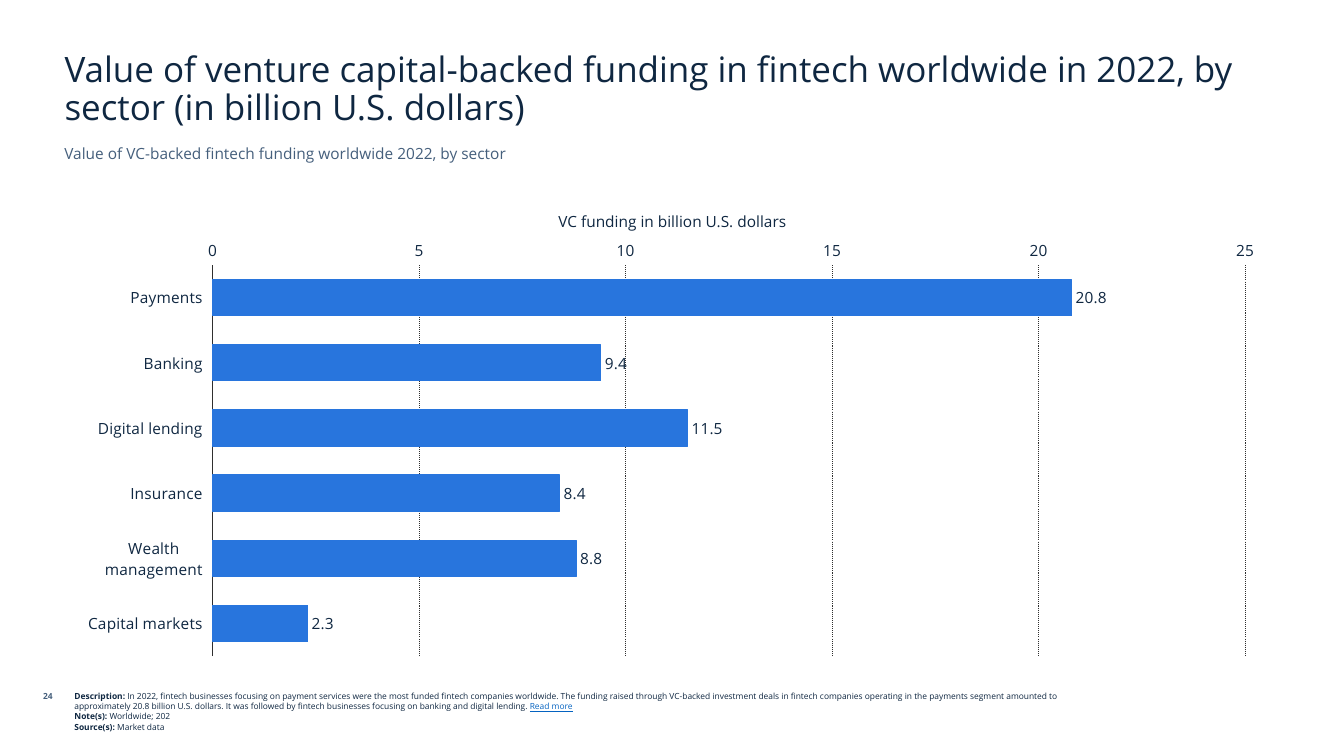
from dataclasses import dataclass

import pptx
import pptx.chart.data
import pptx.dml.color
import pptx.enum.chart
import pptx.enum.dml
import pptx.enum.text
import pptx.oxml
import pptx.oxml.ns
import pptx.util
from pptx.util import Inches

Align = pptx.enum.text.PP_ALIGN
Anchor = pptx.enum.text.MSO_ANCHOR
RGB = pptx.dml.color.RGBColor


@dataclass(frozen=True)
class Theme:
    font: str = "Open Sans"
    navy: RGB = RGB.from_string("0F2741")
    slate: RGB = RGB.from_string("455F7C")
    blue: RGB = RGB.from_string("2875DD")
    link: RGB = RGB.from_string("0563C1")
    rule: RGB = RGB.from_string("2F2F2F")
    title: float = 25
    body: float = 11
    note: float = 6
    line: float = 0.75


THEME = Theme()


@dataclass(frozen=True)
class Box:
    left: float
    top: float
    width: float
    height: float

    def lengths(self) -> tuple:
        return tuple(Inches(v) for v in (self.left, self.top, self.width, self.height))


@dataclass(frozen=True)
class Label:
    text: str
    box: Box
    size: float = THEME.body
    color: RGB = THEME.navy
    bold: bool = False
    align: Align = Align.LEFT


@dataclass(frozen=True)
class Note:
    heading: str
    text: str
    link: str = ""


TITLE = ("Value of venture capital-backed funding in fintech worldwide in 2022, "
         "by sector (in billion U.S. dollars)")
TITLE_BOX = Box(0.54, 0.46, 12.24, 0.86)
NOTES_BOX = Box(0.64, 6.81, 10.47, 0.58)
CHART_BOX = Box(0.64, 2.3, 12.05, 4.3)
PLOT_BOX = Box(2.11, 2.63, 10.24, 3.88)

LABELS = [
    Label("Value of VC-backed fintech funding worldwide 2022, by sector",
          Box(0.54, 1.38, 12.24, 0.34), color=THEME.slate),
    Label("VC funding in billion U.S. dollars", Box(5.05, 2.06, 3.24, 0.24),
          align=Align.CENTER),
    Label("24", Box(-0.1, 6.81, 0.72, 0.3), THEME.note, THEME.slate, True, Align.RIGHT),
]

NOTES = [
    Note("Description: ",
         "In 2022, fintech businesses focusing on payment services were the most funded "
         "fintech companies worldwide. The funding raised through VC-backed investment deals "
         "in fintech companies operating in the payments segment amounted to approximately "
         "20.8 billion U.S. dollars. It was followed by fintech businesses focusing on banking "
         "and digital lending. ", "Read more"),
    Note("Note(s): ", "Worldwide; 202"),
    Note("Source(s): ", "Market data"),
]

FUNDING = {
    "Payments": 20.8,
    "Banking": 9.4,
    "Digital lending": 11.5,
    "Insurance": 8.4,
    "Wealth management": 8.8,
    "Capital markets": 2.3,
}


def set_font(font, size: float, color: RGB = THEME.navy) -> None:
    font.name = THEME.font
    font.size = pptx.util.Pt(size)
    font.color.rgb = color


def set_line(line, color: RGB) -> None:
    line.color.rgb = color
    line.width = pptx.util.Pt(THEME.line)


def add_title(s) -> None:
    sp = s.shapes.title
    sp.left, sp.top, sp.width, sp.height = TITLE_BOX.lengths()
    tf = sp.text_frame
    tf.text = TITLE
    tf.word_wrap = True
    tf.auto_size = pptx.enum.text.MSO_AUTO_SIZE.NONE
    tf.vertical_anchor = Anchor.BOTTOM
    p = tf.paragraphs[0]
    p.alignment = Align.LEFT
    p.line_spacing = 0.9
    set_font(p.font, THEME.title)


def add_text_frame(s, box: Box):
    tf = s.shapes.add_textbox(*box.lengths()).text_frame
    tf.word_wrap = True
    return tf


def add_label(s, label: Label) -> None:
    p = add_text_frame(s, label.box).paragraphs[0]
    p.text = label.text
    p.alignment = label.align
    set_font(p.font, label.size, label.color)
    p.font.bold = label.bold


def add_notes(s) -> None:
    tf = add_text_frame(s, NOTES_BOX)
    for i, note in enumerate(NOTES):
        p = tf.add_paragraph() if i else tf.paragraphs[0]
        set_font(p.font, THEME.note)
        r = p.add_run()
        r.text = note.heading
        r.font.bold = True
        p.add_run().text = note.text
        if note.link:
            r = p.add_run()
            r.text = note.link
            r.font.underline = True
            r.font.color.rgb = THEME.link


def fix_plot_area(chart) -> None:
    """Pin the inner plot area to PLOT_BOX, as fractions of the chart frame."""
    fractions = {
        "x": (PLOT_BOX.left - CHART_BOX.left) / CHART_BOX.width,
        "y": (PLOT_BOX.top - CHART_BOX.top) / CHART_BOX.height,
        "w": PLOT_BOX.width / CHART_BOX.width,
        "h": PLOT_BOX.height / CHART_BOX.height,
    }
    modes = '<c:layoutTarget val="inner"/><c:xMode val="edge"/><c:yMode val="edge"/>'
    sizes = "".join(f'<c:{k} val="{v:.4f}"/>' for k, v in fractions.items())
    layout = pptx.oxml.parse_xml(
        f'<c:layout {pptx.oxml.ns.nsdecls("c")}>'
        f"<c:manualLayout>{modes}{sizes}</c:manualLayout></c:layout>")
    plot_area = chart.plots[0]._element.getparent()
    for old in plot_area.findall(pptx.oxml.ns.qn("c:layout")):
        plot_area.remove(old)
    plot_area.insert(0, layout)


def add_funding_chart(s) -> None:
    data = pptx.chart.data.CategoryChartData()
    data.categories = list(FUNDING)
    data.add_series("Series 1", list(FUNDING.values()))
    chart = s.shapes.add_chart(pptx.enum.chart.XL_CHART_TYPE.BAR_CLUSTERED,
                               *CHART_BOX.lengths(), data).chart
    chart.has_title = False
    chart.has_legend = False
    set_font(chart.font, THEME.body)
    fix_plot_area(chart)

    sectors, amounts = chart.category_axis, chart.value_axis
    for axis in (sectors, amounts):
        axis.major_tick_mark = axis.minor_tick_mark = pptx.enum.chart.XL_TICK_MARK.NONE
        set_font(axis.tick_labels.font, THEME.body)
    sectors.reverse_order = True
    sectors.tick_label_position = pptx.enum.chart.XL_TICK_LABEL_POSITION.LOW
    set_line(sectors.format.line, THEME.rule)
    amounts.minimum_scale, amounts.maximum_scale, amounts.major_unit = 0, 25, 5
    amounts.tick_labels.number_format = "#,##0"
    amounts.tick_labels.number_format_is_linked = False
    amounts.format.line.fill.background()
    grid = amounts.major_gridlines.format.line
    set_line(grid, THEME.rule)
    grid.dash_style = pptx.enum.dml.MSO_LINE.ROUND_DOT

    plot = chart.plots[0]
    plot.gap_width, plot.overlap = 80, -30
    plot.vary_by_categories = False
    bars = plot.series[0]
    bars.format.fill.solid()
    bars.format.fill.fore_color.rgb = THEME.blue
    set_line(bars.format.line, THEME.blue)
    labels = bars.data_labels
    labels.show_value = True
    labels.position = pptx.enum.chart.XL_LABEL_POSITION.OUTSIDE_END
    set_font(labels.font, THEME.body)


def main() -> None:
    prs = pptx.Presentation()
    prs.slide_width, prs.slide_height = Inches(13.33), Inches(7.5)
    s = prs.slides.add_slide(prs.slide_layouts.get_by_name("Title Only"))
    add_title(s)
    add_notes(s)
    add_funding_chart(s)
    for label in LABELS:
        add_label(s, label)
    prs.save("out.pptx")


if __name__ == "__main__":
    main()
